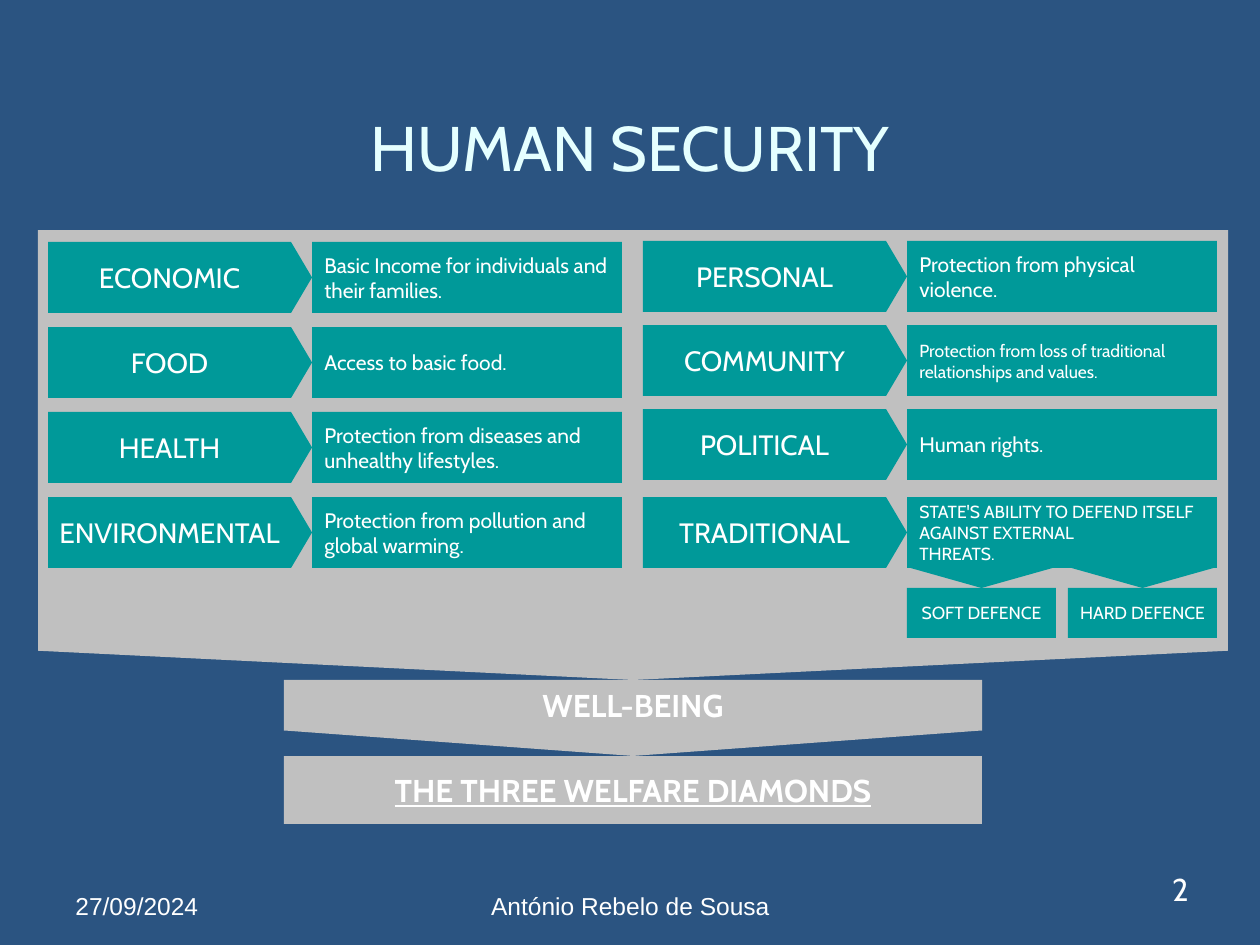
from pptx import Presentation
from pptx.dml.color import RGBColor as RGB
from pptx.enum.shapes import MSO_SHAPE as Shape
from pptx.enum.text import MSO_ANCHOR as Anchor, MSO_AUTO_SIZE as Auto, PP_ALIGN as Align
from pptx.util import Pt

PX = 914400 / 126
COLORS = {"back": "2B5481", "teal": "009999", "grey": "C0C0C0",
          "white": "FFFFFF", "title": "E5FFFF"}


def write(item, text, size, align=Align.CENTER, anchor=Anchor.MIDDLE,
          wrap=False, color="white", face="Cabin", **extra):
    frame = item.text_frame
    frame.text = text
    for key, val in {"word_wrap": wrap, "vertical_anchor": anchor,
                     "auto_size": Auto.NONE}.items():
        setattr(frame, key, val)
    for para in frame.paragraphs:
        para.alignment = align
        for key, val in {"name": face, "size": Pt(size), **extra}.items():
            setattr(para.font, key, val)
        para.font.color.rgb = RGB.from_string(COLORS[color])


def draw(home, kind, box, color="teal", turn=0, adjust=()):
    item = home.add_shape(kind, *[round(n * PX) for n in box])
    item.shadow.inherit = False
    item.fill.solid()
    item.fill.fore_color.rgb = RGB.from_string(COLORS[color])
    item.line.fill.background()
    item.rotation = turn
    for i, val in enumerate(adjust):
        item.adjustments[i] = val
    return item


deck = Presentation()
deck.slide_width, deck.slide_height = round(1260 * PX), round(945 * PX)
slide = deck.slides.add_slide(deck.slide_layouts[5])
slide.background.fill.solid()
slide.background.fill.fore_color.rgb = RGB.from_string(COLORS["back"])
shapes = slide.shapes

title = shapes.title
for key, val in {"left": 63, "top": 52, "width": 1134, "height": 189}.items():
    setattr(title, key, round(val * PX))
write(title, "HUMAN SECURITY", 36, wrap=True, color="title")

draw(shapes, Shape.DOWN_ARROW_CALLOUT, (38, 230, 1190, 450), "grey",
     adjust=(2.645, 1.322, 0.065, 0.667))

HIGH, TIP = 71, 21
sides = [
    (48, [
        (242, "ECONOMIC", "Basic Income for individuals and their families.", 12),
        (327, "FOOD", "Access to basic food.", 12),
        (412, "HEALTH", "Protection from diseases and unhealthy lifestyles.", 12),
        (497, "ENVIRONMENTAL", "Protection from pollution and global warming.", 12),
    ]),
    (643, [
        (241, "PERSONAL", "Protection from physical violence.", 12),
        (325, "COMMUNITY", "Protection from loss of traditional relationships and values.", 10),
        (409, "POLITICAL", "Human rights.", 12),
        (497, "TRADITIONAL", "STATE'S ABILITY TO DEFEND ITSELF AGAINST EXTERNAL\nTHREATS.", 10),
    ]),
]
for left, rows in sides:
    for top, name, note, size in rows:
        text = draw(shapes, Shape.RECTANGLE, (left + 264, top, 310, HIGH))
        write(text, note, size, align=Align.LEFT, wrap=True)
        group = shapes.add_group_shape().shapes
        label = draw(group, Shape.RECTANGLE, (left, top, 243, HIGH))
        write(label, name, 16)
        draw(group, Shape.ISOSCELES_TRIANGLE,
             (left + 218, top + (HIGH - TIP) // 2, HIGH, TIP), turn=90)

for left, name in [(907, "SOFT DEFENCE"), (1068, "HARD DEFENCE")]:
    draw(shapes, Shape.ISOSCELES_TRIANGLE, (left, 567, 149, TIP), turn=180)
    write(draw(shapes, Shape.RECTANGLE, (left, 588, 149, 50)), name, 10)

goal = draw(shapes, Shape.DOWN_ARROW_CALLOUT, (284, 680, 698, 76), "grey",
            adjust=(2.289, 4.549, 0.332, 0.667))
write(goal, "WELL-BEING", 18, bold=True)
base = draw(shapes, Shape.RECTANGLE, (284, 756, 698, 68), "grey")
write(base, "THE THREE WELFARE DIAMONDS", 18, bold=True, underline=True)

notes = [
    ((63, 861, 294, 66), "27/09/2024", 14, Align.LEFT, Anchor.BOTTOM, True, "Arial"),
    ((431, 861, 399, 66), "António Rebelo de Sousa", 14, Align.CENTER, Anchor.BOTTOM, True, "Arial"),
    ((1159, 864, 43, 50), "2", 18, Align.CENTER, Anchor.TOP, False, "Cabin"),
]
for box, text, size, align, anchor, wrap, face in notes:
    item = shapes.add_textbox(*[round(n * PX) for n in box])
    write(item, text, size, align, anchor, wrap, face=face)

deck.save("out.pptx")
